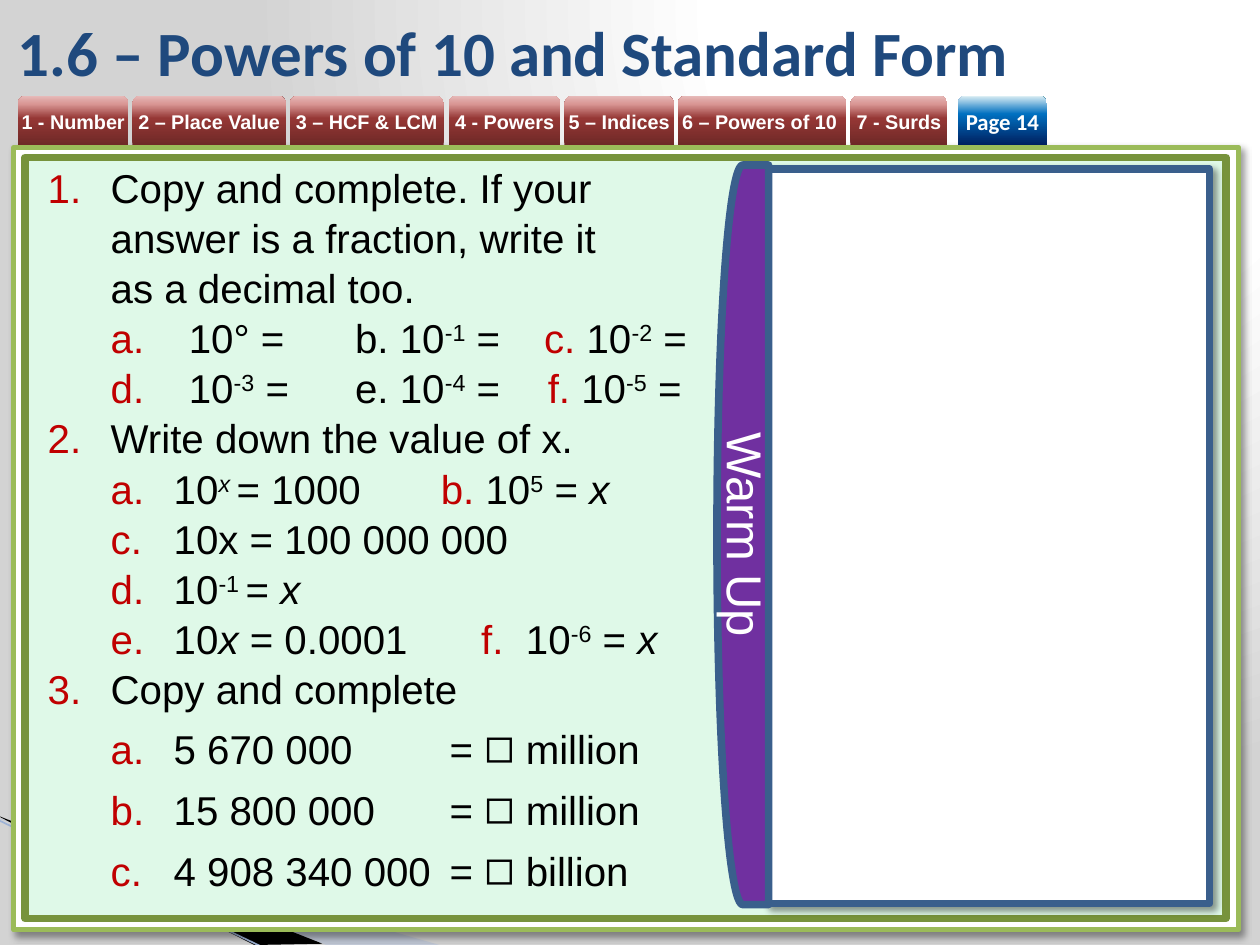
from lxml import etree
from pptx import Presentation
from pptx.dml.color import RGBColor
from pptx.enum.shapes import MSO_CONNECTOR, MSO_SHAPE as SHAPE
from pptx.enum.text import MSO_ANCHOR as ANCHOR, MSO_AUTO_SIZE as AUTO_SIZE, PP_ALIGN as ALIGN
from pptx.oxml.ns import qn
from pptx.util import Inches, Pt

WHITE = RGBColor(0xFF, 0xFF, 0xFF)
BLACK = RGBColor(0, 0, 0)
RED = RGBColor(0xC0, 0, 0)
NAVY = RGBColor(0x1F, 0x49, 0x7D)
BLUE_EDGE = RGBColor(0x3A, 0x5F, 0x8C)
GREEN_EDGE = RGBColor(0x9B, 0xBB, 0x59)
OLIVE = RGBColor(0x77, 0x93, 0x3C)
MINT = RGBColor(0xDF, 0xF9, 0xE8)
PURPLE = RGBColor(0x70, 0x30, 0xA0)
PALE_BLUE = RGBColor(0xA7, 0xB9, 0xDB)
LINE_BLUE = RGBColor(0x9E, 0xB3, 0xD6)
RED_TAB = [(0, "6F2927"), (54, "953735"), (83, "D99694"), (100, "E6B9B8")]
BLUE_TAB = [(0, "002060"), (63, "0070C0"), (100, "DBEEF4")]
BACKDROP = [(0, "FFFFFF"), (40, "FFFFFF"), (100, "D3D3D3")]


def child(parent, tag, **attributes):
    return etree.SubElement(parent, qn(tag), {k: str(v) for k, v in attributes.items()})


def set_gradient(owner, stops, circle=None):
    """Swap the solid fill under owner for a gradient, upward or towards a circle's rectangle."""
    solid = next(owner.iter(qn("a:solidFill")))
    gradient = etree.Element(qn("a:gradFill"), rotWithShape="1")
    stop_list = child(gradient, "a:gsLst")
    for position, colour in stops:
        child(child(stop_list, "a:gs", pos=position * 1000), "a:srgbClr", val=colour)
    if circle:
        child(child(gradient, "a:path", path="circle"), "a:fillToRect", **circle)
    else:
        child(gradient, "a:lin", ang=16200000, scaled=0)
    solid.getparent().replace(solid, gradient)


def write(paragraph, text, size=23, font="Arial", colour=BLACK, bold=False, italic=False, raised=False):
    run = paragraph.add_run()
    run.text = text
    run.font.size, run.font.name = Pt(size), font
    run.font.bold, run.font.italic = bold, italic
    run.font.color.rgb = colour
    if raised:
        run._r.get_or_add_rPr().set("baseline", "30000")


def sup(text, **style):
    return text, dict(style, raised=True)


def red(text):
    return text, {"colour": RED}


X = ("x", {"italic": True})
BOX = ("◻", {"size": 28})


class Board:
    def __init__(self, slide):
        self.slide = slide
        self.shapes = slide.shapes

    def background(self, stops, circle):
        background = self.slide.background
        background.fill.solid()
        background.fill.fore_color.rgb = WHITE
        set_gradient(background._cSld, stops, circle)

    def wedge(self, points, colour, opacity=100):
        (left, top), *rest = [(Inches(x), Inches(y)) for x, y in points]
        builder = self.shapes.build_freeform(left, top)
        builder.add_line_segments(rest, close=True)
        wedge = builder.convert_to_shape()
        self.paint(wedge, colour)
        if opacity < 100:
            child(next(wedge._element.spPr.iter(qn("a:srgbClr"))), "a:alpha", val=opacity * 1000)

    def line(self, start, end, colour, width):
        connector = self.shapes.add_connector(MSO_CONNECTOR.STRAIGHT, *map(Inches, start + end))
        connector.line.color.rgb = colour
        connector.line.width = Pt(width)
        child(connector._element.spPr, "a:effectLst")

    def paint(self, shape, fill, edge=None, width=0):
        shape.shadow.inherit = False
        shape.fill.solid()
        shape.fill.fore_color.rgb = fill
        if edge is None:
            shape.line.fill.background()
        else:
            shape.line.color.rgb = edge
            shape.line.width = Pt(width)

    def panel(self, place, fill, edge, width, kind=SHAPE.RECTANGLE, shadow=False):
        panel = self.shapes.add_shape(kind, *map(Inches, place))
        self.paint(panel, fill, edge, width)
        if shadow:
            effects = panel._element.spPr.find(qn("a:effectLst"))
            outer = child(effects, "a:outerShdw", blurRad=Pt(4), dist=Pt(3), dir=2700000, rotWithShape=0)
            child(child(outer, "a:srgbClr", val="000000"), "a:alpha", val=40000)
        return panel

    def centred_text(self, shape, text, **style):
        frame = shape.text_frame
        frame.margin_left = frame.margin_right = frame.margin_top = frame.margin_bottom = 0
        frame.vertical_anchor = ANCHOR.MIDDLE
        frame.paragraphs[0].alignment = ALIGN.CENTER
        write(frame.paragraphs[0], text, colour=WHITE, **style)

    def tab(self, left, width, label, stops=RED_TAB, **style):
        tab = self.panel((left, 0.76, width, 0.39), WHITE, None, 0, SHAPE.ROUND_2_SAME_RECTANGLE)
        set_gradient(tab._element.spPr, stops)
        self.centred_text(tab, label, bold=True, **style)
        tab.text_frame.word_wrap = False

    def text_box(self, place):
        frame = self.shapes.add_textbox(*map(Inches, place)).text_frame
        frame.word_wrap = True
        return frame

    def item(self, paragraph, level, indent, hanging, start, tabs, parts):
        """Fill a numbered paragraph: level 3 is a question, level 4 a lettered part."""
        paragraph.level = level
        paragraph.line_spacing = 1.04
        properties = paragraph._p.get_or_add_pPr()
        properties.set("marL", str(Inches(indent)))
        properties.set("indent", str(-Inches(hanging)))
        child(child(properties, "a:buClr"), "a:srgbClr", val=str(RED))
        child(properties, "a:buFont", typeface="+mj-lt")
        scheme = "arabicPeriod" if level == 3 else "alphaLcPeriod"
        child(properties, "a:buAutoNum", type=scheme, startAt=start)
        stops = child(properties, "a:tabLst")
        for position in tabs:
            child(stops, "a:tab", pos=Inches(position), algn="l")
        for part in parts:
            text, style = (part, {}) if isinstance(part, str) else part
            for number, row in enumerate(text.split("\n")):
                if number:
                    paragraph.add_line_break()
                    paragraph._p[-1].append(etree.Element(qn("a:rPr"), sz="2300"))
                write(paragraph, row, **style)


def question(*parts):
    return 3, 0.5, 0.5, 1, [3], parts


def answer(*parts, start=1, tabs=(), indent=1, hanging=0.5):
    return 4, indent, hanging, start, tabs, parts


def powers(first, second, third, start, tabs):
    return answer(*first, " =\t", *second, " =\t", *third, " =",
                  start=start, tabs=tabs, indent=1.12, hanging=0.62)


def rounded(number, unit):
    return answer(f"{number} \t= ", BOX, f" {unit}", tabs=[3.19])


QUESTIONS = [
    question("Copy and complete. If your \nanswer is a fraction, write it \nas a decimal too."),
    powers(["10°"], ["b. 10", sup("-1")], [red("c."), " 10", sup("-2")], 1, [2.44, 3.94]),
    powers(["10", sup("-3")], ["e. 10", sup("-4")], [" ", red("f."), " 10", sup("-5")], 4, [2.44, 3.88]),
    question("Write down the value of x."),
    answer("10", sup("x ", italic=True), "= 1000\t", red("b."), " 10", sup("5"), " = ", X, tabs=[3.12]),
    answer("10x = 100 000 000", start=3),
    answer("10", sup("-1 "), "= ", X, start=3),
    answer("10", X, " = 0.0001\t", red("f."), "  10", sup("-6"), " = ", X, start=3, tabs=[3.44]),
    question("Copy and complete"),
    rounded("5 670 000", "million"),
    rounded("15 800 000", "million"),
    rounded("4 908 340 000", "billion"),
]
TABS = [
    (0.14, 0.88, "1 - Number"), (1.05, 1.22, "2 – Place Value"), (2.3, 1.22, "3 – HCF & LCM"),
    (3.56, 0.89, "4 - Powers"), (4.48, 0.87, "5 – Indices"), (5.38, 1.34, "6 – Powers of 10 "),
    (6.75, 0.77, "7 - Surds"),
]


def main():
    deck = Presentation()
    deck.slide_width, deck.slide_height = Inches(10), Inches(7.5)
    board = Board(deck.slides.add_slide(deck.slide_layouts[6]))
    board.background(BACKDROP, {"l": 65000, "t": 0, "r": 0, "b": 98000})

    board.wedge([(-0.01, 6.5), (3.49, 7.5), (2.59, 7.5), (-0.01, 6.49)], PALE_BLUE, opacity=40)
    board.wedge([(0, 6.48), (2.56, 7.49), (2.02, 7.5), (0.01, 6.49)], BLACK)
    board.line((-0.01, 6.51), (2.09, 7.52), LINE_BLUE, 0.95)
    board.panel((0.11, 1.17, 9.72, 6.21), WHITE, GREEN_EDGE, 3, shadow=True)
    board.panel((0.2, 1.25, 9.53, 6.04), MINT, OLIVE, 4.33)
    board.panel((6.1, 1.34, 3.5, 5.83), WHITE, BLUE_EDGE, 4.33, shadow=True)

    for left, width, label in TABS:
        board.tab(left, width, label, size=11.3)
    board.tab(7.6, 0.71, "Page 14", BLUE_TAB, size=13, font="Calibri")

    exercise = board.text_box((0.28, 1.23, 5.75, 5.77))
    exercise.auto_size = AUTO_SIZE.SHAPE_TO_FIT_TEXT
    for number, entry in enumerate(QUESTIONS):
        board.item(exercise.add_paragraph() if number else exercise.paragraphs[0], *entry)

    title = board.text_box((0.04, 0.05, 8.27, 0.71))
    title.vertical_anchor = ANCHOR.MIDDLE
    write(title.paragraphs[0], "1.6 – Powers of 10 and Standard Form",
          size=36, font="Calibri", colour=NAVY, bold=True)

    warm_up = board.panel((5.69, 1.31, 0.41, 5.87), PURPLE, BLUE_EDGE, 4.33, SHAPE.FLOWCHART_DELAY)
    warm_up._element.spPr.find(qn("a:xfrm")).set("flipH", "1")
    board.centred_text(warm_up, "Warm Up", size=28)
    warm_up.text_frame._txBody.bodyPr.set("vert", "vert")

    deck.save("out.pptx")


if __name__ == "__main__":
    main()
